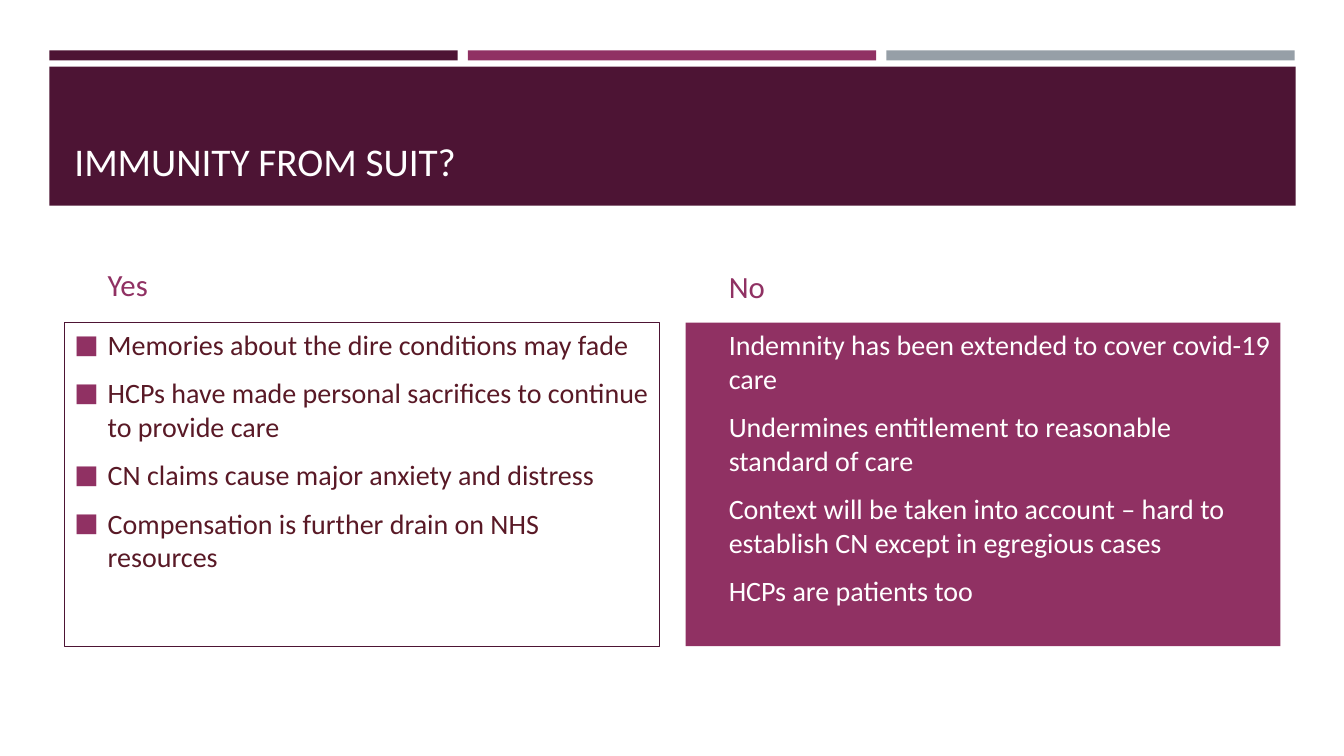
from dataclasses import dataclass

from lxml import etree
from pptx import Presentation
from pptx.dml.color import RGBColor
from pptx.enum import shapes, text
from pptx.oxml import ns
from pptx.util import Pt

PX = 9144  # EMU in one px, at 100 px to the inch


@dataclass(frozen=True)
class Theme:
    font: str = "Calibri"
    plum: str = "4D1434"
    rose: str = "903163"
    grey: str = "969FA7"
    wine: str = "591926"
    white: str = "FFFFFF"
    title: int = 28
    head: int = 22
    body: int = 20


T = Theme()

YES = [
    "Memories about the dire conditions may fade",
    "HCPs have made personal sacrifices to continue to provide care",
    "CN claims cause major anxiety and distress",
    "Compensation is further drain on NHS resources",
]
NO = [
    "Indemnity has been extended to cover covid-19 care",
    "Undermines entitlement to reasonable standard of care",
    "Context will be taken into account – hard to establish CN except in egregious cases",
    "HCPs are patients too",
]


def scale(*box):
    return [n * PX for n in box]


def add_rect(slide, box, fill=None, line=None):
    rect = slide.shapes.add_shape(shapes.MSO_SHAPE.RECTANGLE, *scale(*box))
    rect.shadow.inherit = False
    if fill:
        rect.fill.solid()
        rect.fill.fore_color.rgb = RGBColor.from_string(fill)
    else:
        rect.fill.background()
    if line:
        rect.line.color.rgb = RGBColor.from_string(line)
        rect.line.width = Pt(0.75)
    else:
        rect.line.fill.background()
    return rect


def add_box(slide, box):
    return slide.shapes.add_textbox(*scale(*box))


def add_bullet(props, color):
    """Give the paragraph a square marker in the given colour."""
    tint = etree.SubElement(props, ns.qn("a:buClr"))
    etree.SubElement(tint, ns.qn("a:srgbClr"), val=color)
    etree.SubElement(props, ns.qn("a:buSzPct"), val="92000")
    etree.SubElement(props, ns.qn("a:buFont"), typeface=T.font)
    etree.SubElement(props, ns.qn("a:buChar"), char="■")


def write(shape, lines, size, color, anchor=text.MSO_ANCHOR.BOTTOM,
          before=0, after=0, indent=0, bullet=None):
    frame = shape.text_frame
    frame.word_wrap = True
    frame.vertical_anchor = anchor
    for i, line in enumerate(lines):
        para = frame.add_paragraph() if i else frame.paragraphs[0]
        para.alignment = text.PP_ALIGN.LEFT
        para.space_before, para.space_after = Pt(before), Pt(after)
        run = para.add_run()
        run.text = line
        run.font.name, run.font.size = T.font, Pt(size)
        run.font.color.rgb = RGBColor.from_string(color)
        props = para._p.get_or_add_pPr()
        props.set("marL", str(indent * PX))
        if bullet:
            props.set("indent", str(-indent * PX))
            add_bullet(props, bullet)


def add_banner(slide, title):
    for i, color in enumerate((T.plum, T.rose, T.grey)):
        add_rect(slide, (49 + 415 * i, 50, 405, 10), fill=color)
    add_rect(slide, (49, 66, 1236, 138), fill=T.plum)
    write(add_box(slide, (64, 80, 1206, 108)), [title], T.title, T.white)


def add_column(slide, left, head, height, items, color,
               fill=None, line=None, bullet=None):
    label = add_box(slide, (left + 33, 246, 556, height))
    write(label, [head], T.head, T.rose)
    panel = add_rect(slide, (left, 320, 590, 321), fill, line)
    write(panel, items, T.body, color, anchor=text.MSO_ANCHOR.TOP,
          before=4.5, after=6, indent=33, bullet=bullet)


def main():
    deck = Presentation()
    deck.slide_width, deck.slide_height = scale(1333, 750)
    slide = deck.slides.add_slide(deck.slide_layouts[6])
    add_banner(slide, "IMMUNITY FROM SUIT?")
    add_column(slide, 64, "Yes", 59, YES, T.wine, line=T.plum, bullet=T.rose)
    add_column(slide, 680, "No", 61, NO, T.white, fill=T.rose)
    deck.save("out.pptx")


if __name__ == "__main__":
    main()
